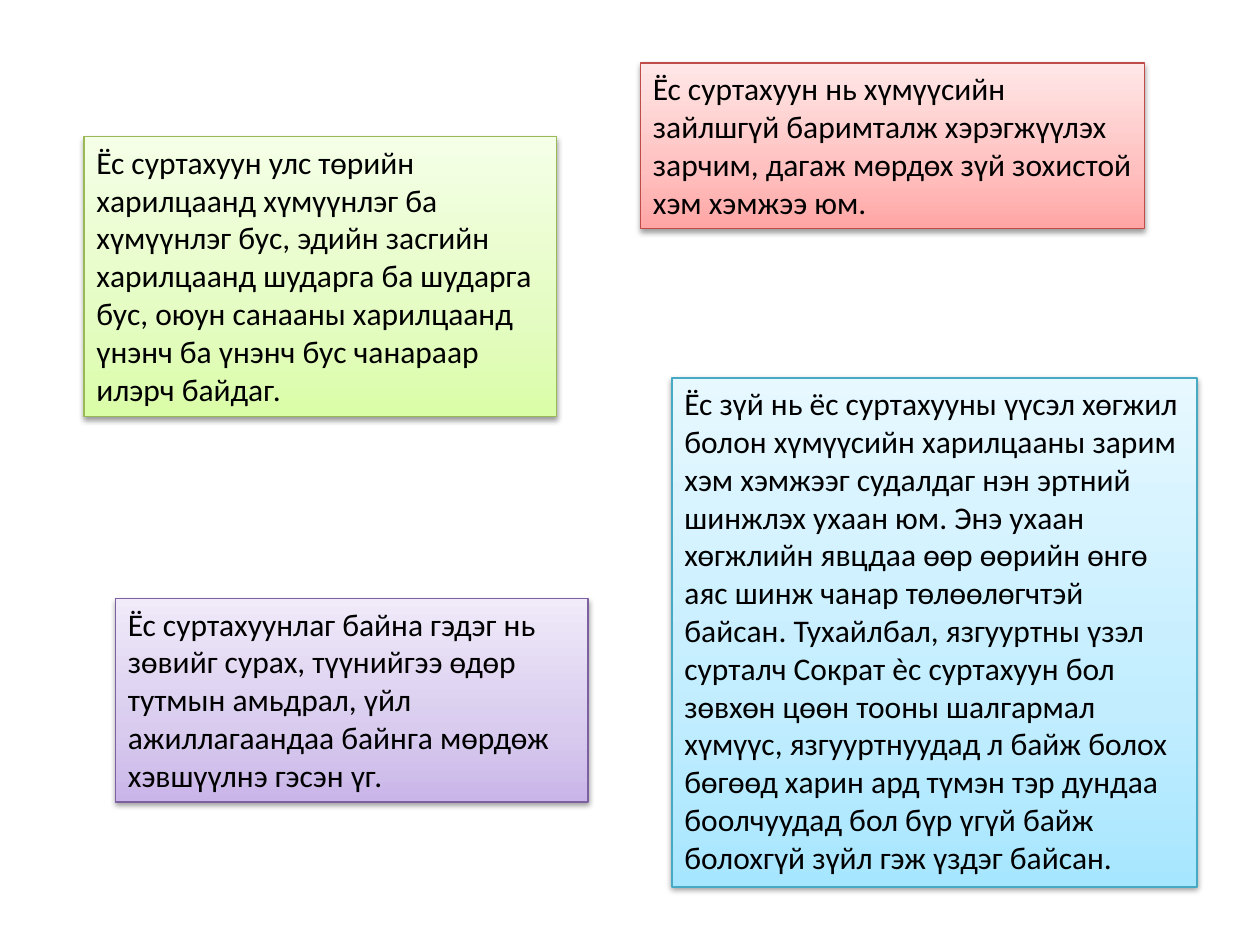
from lxml.etree import SubElement
from pptx import Presentation
from pptx.dml.color import RGBColor
from pptx.enum.text import MSO_AUTO_SIZE as AutoSize
from pptx.oxml.ns import qn
from pptx.util import Inches, Pt

UNIT = Inches(1) / 12             # grid step: 120 columns by 90 rows
LINE_H, PADDING = 0.303, 0.1      # inches: one text line, top plus bottom inset
STOPS = (0, 35, 100)              # gradient positions, per cent

# column, row, columns wide, text lines, outline, gradient from the bottom up, text
NOTES = [
    (8, 13, 45, 7, "98B955", ("DAFDA7", "E4FCC2", "F5FFE7"),
     "Ёс суртахуун улс төрийн харилцаанд хүмүүнлэг ба хүмүүнлэг бус, эдийн "
     "засгийн харилцаанд шударга ба шударга бус, оюун санааны харилцаанд "
     "үнэнч ба үнэнч бус чанараар илэрч байдаг."),
    (61, 6, 48, 4, "BF4C48", ("FFA6A5", "FFC0BF", "FFE7E7"),
     "Ёс суртахуун нь хүмүүсийн зайлшгүй баримталж хэрэгжүүлэх зарчим, "
     "дагаж мөрдөх зүй зохистой хэм хэмжээ юм."),
    (11, 57, 45, 5, "7D60A0", ("C9B5E8", "D8CBEE", "F0EAF9"),
     "Ёс суртахуунлаг байна гэдэг нь зөвийг сурах, түүнийгээ өдөр тутмын "
     "амьдрал, үйл ажиллагаандаа байнга мөрдөж хэвшүүлнэ гэсэн үг."),
    (64, 36, 50, 13, "46AAC5", ("A7E6FF", "C1EDFF", "E7F8FF"),
     "Ёс зүй нь ёс суртахууны үүсэл хөгжил болон хүмүүсийн харилцааны зарим "
     "хэм хэмжээг судалдаг нэн эртний шинжлэх ухаан юм. Энэ ухаан хөгжлийн "
     "явцдаа өөр өөрийн өнгө аяс шинж чанар төлөөлөгчтэй байсан. Тухайлбал, "
     "язгууртны үзэл сурталч Сократ ѐс суртахуун бол зөвхөн цөөн тооны "
     "шалгармал хүмүүс, язгууртнуудад л байж болох бөгөөд харин ард түмэн "
     "тэр дундаа боолчуудад бол бүр үгүй байж болохгүй зүйл гэж үздэг байсан."),
]


def rgb(code):
    return RGBColor.from_string(code)


def add_color(parent, code, **mods):
    color = SubElement(parent, qn("a:srgbClr"), val=code)
    for name, val in mods.items():
        SubElement(color, qn(f"a:{name}"), val=str(val))


def set_gradient(sp, colors):
    sp.fill.gradient()
    sp.fill.gradient_angle = 90
    stops = sp._element.spPr.find(qn("a:gradFill")).find(qn("a:gsLst"))
    for old in list(stops):
        stops.remove(old)
    for pos, code in zip(STOPS, colors):
        add_color(SubElement(stops, qn("a:gs"), pos=str(pos * 1000)), code)


def set_shadow(sp):
    sp.shadow.inherit = False
    effects = sp._element.spPr.find(qn("a:effectLst"))
    shadow = SubElement(effects, qn("a:outerShdw"), blurRad="40000",
                        dist="20000", dir="5400000", rotWithShape="0")
    add_color(shadow, "000000", alpha=38000)


def add_note(s, col, row, cols, lines, outline, colors, text):
    height = Inches(lines * LINE_H + PADDING)
    sp = s.shapes.add_textbox(*(int(n * UNIT) for n in (col, row, cols)), height)

    # Box
    set_gradient(sp, colors)
    sp.line.color.rgb = rgb(outline)
    sp.line.width = Pt(0.75)
    set_shadow(sp)

    # Text
    tf = sp.text_frame
    tf.word_wrap = True
    tf.auto_size = AutoSize.SHAPE_TO_FIT_TEXT
    p = tf.paragraphs[0]
    p.text = text
    p.font.name, p.font.size = "Calibri", Pt(18)
    p.font.color.rgb = rgb("000000")


def main():
    prs = Presentation()
    prs.slide_width, prs.slide_height = Inches(10), Inches(7.5)
    s = prs.slides.add_slide(prs.slide_layouts[6])
    for note in NOTES:
        add_note(s, *note)
    prs.save("out.pptx")


if __name__ == "__main__":
    main()
